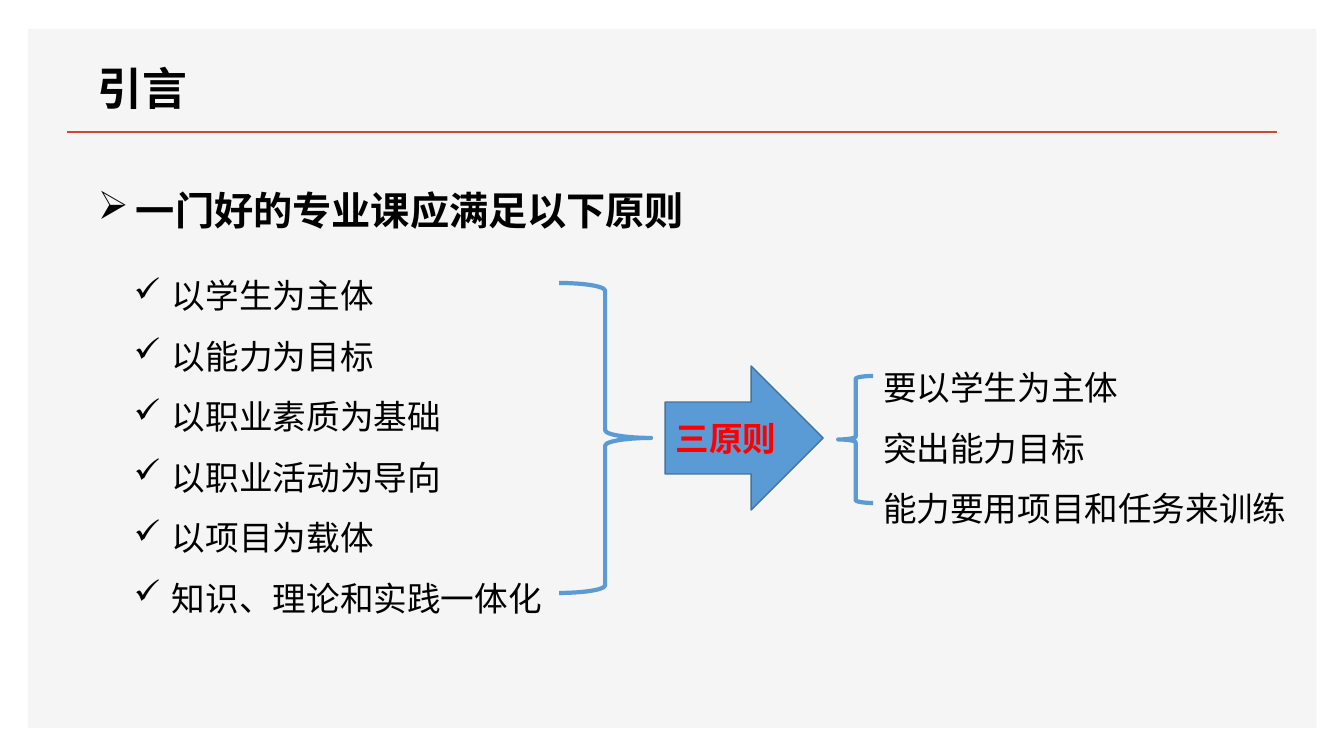
from lxml import etree
from pptx import Presentation
from pptx.dml.color import RGBColor
from pptx.enum.shapes import MSO_CONNECTOR, MSO_SHAPE
from pptx.enum.text import MSO_ANCHOR, MSO_AUTO_SIZE, PP_ALIGN
from pptx.oxml.ns import qn
from pptx.util import Inches, Pt

RECTANGLE = MSO_SHAPE.RECTANGLE
LEFT_BRACE, RIGHT_BRACE = MSO_SHAPE.LEFT_BRACE, MSO_SHAPE.RIGHT_BRACE
RIGHT_ARROW = MSO_SHAPE.RIGHT_ARROW
STRAIGHT = MSO_CONNECTOR.STRAIGHT
MIDDLE, CENTER = MSO_ANCHOR.MIDDLE, PP_ALIGN.CENTER
FIT_SHAPE = MSO_AUTO_SIZE.SHAPE_TO_FIT_TEXT

FONT = "Lato"
COLORS = {
    "panel": "F5F5F5",
    "rule": "D24726",
    "blue": "5B9BD5",
    "blue edge": "43739E",
    "text": "000000",
    "accent": "FF0000",
}

# Text boxes: box in px, lines, format
TEXTS = [
    ((88, 56, 111, 65), ["引言"], {"size": 32, "bold": True}),
    ((88, 158, 613, 73), ["一门好的专业课应满足以下原则"],
     {"size": 28, "bold": True, "spacing": 1.5, "bullet": "➢"}),
    ((124, 250, 463, 377),
     ["以学生为主体", "以能力为目标", "以职业素质为基础",
      "以职业活动为导向", "以项目为载体", "知识、理论和实践一体化"],
     {"size": 24, "spacing": 1.5, "bullet": "✓", "wrap": True}),
    ((873, 342, 427, 194),
     ["要以学生为主体", "突出能力目标", "能力要用项目和任务来训练"],
     {"size": 24, "spacing": 1.5}),
]
ARROW_LABEL = "三原则"

# Shapes: preset, box in px, fill, line colour, line width in points
PANEL = (RECTANGLE, (28, 29, 1288, 699), "panel", None, 0)
PRINCIPLES_BRACE = (RIGHT_BRACE, (559, 283, 92, 310), None, "blue", 3)
ARROW = (RIGHT_ARROW, (665, 366, 158, 144), "blue", "blue edge", 1)
SUMMARY_BRACE = (LEFT_BRACE, (838, 376, 35, 127), None, "blue", 3)
TITLE_RULE = (67, 132, 1277, 132)
BULLET_INDENT = 38


def px(value):
    return round(value * 914400 / 100.8)


def color(name):
    return RGBColor.from_string(COLORS[name])


def add_shape(slide, preset, box, fill, line, width):
    shape = slide.shapes.add_shape(preset, *map(px, box))
    shape.shadow.inherit = False
    if fill:
        shape.fill.solid()
        shape.fill.fore_color.rgb = color(fill)
    else:
        shape.fill.background()
    if line:
        shape.line.color.rgb = color(line)
        shape.line.width = Pt(width)
    else:
        shape.line.fill.background()
    return shape


def add_rule(slide, ends):
    rule = slide.shapes.add_connector(STRAIGHT, *map(px, ends))
    rule.line.color.rgb = color("rule")
    rule.line.width = Pt(2)
    etree.SubElement(rule._element.spPr, qn("a:effectLst"))


def write_run(paragraph, text, size, bold=False, text_color="text"):
    run = paragraph.add_run()
    run.text = text
    run.font.color.rgb = color(text_color)
    for name, value in {"name": FONT, "size": Pt(size), "bold": bold}.items():
        setattr(run.font, name, value)
    east_asian = etree.SubElement(run._r.get_or_add_rPr(), qn("a:ea"))
    east_asian.set("typeface", FONT)


def add_bullet(paragraph, character):
    properties = paragraph._p.get_or_add_pPr()
    properties.set("marL", str(px(BULLET_INDENT)))
    properties.set("indent", str(-px(BULLET_INDENT)))
    etree.SubElement(properties, qn("a:buChar")).set("char", character)


def add_text(slide, box, lines, style):
    frame = slide.shapes.add_textbox(*map(px, box)).text_frame
    frame.word_wrap = style.get("wrap", False)
    frame.auto_size = FIT_SHAPE
    for index, line in enumerate(lines):
        paragraph = frame.add_paragraph() if index else frame.paragraphs[0]
        paragraph.line_spacing = style.get("spacing")
        if "bullet" in style:
            add_bullet(paragraph, style["bullet"])
        write_run(paragraph, line, style["size"], style.get("bold", False))


def main():
    presentation = Presentation()
    presentation.slide_width = Inches(13.33)
    presentation.slide_height = Inches(7.5)
    slide = presentation.slides.add_slide(presentation.slide_layouts[6])

    add_shape(slide, *PANEL)
    add_rule(slide, TITLE_RULE)
    for box, lines, style in TEXTS:
        add_text(slide, box, lines, style)

    add_shape(slide, *PRINCIPLES_BRACE)
    arrow = add_shape(slide, *ARROW)
    arrow.text_frame.vertical_anchor = MIDDLE
    label = arrow.text_frame.paragraphs[0]
    label.alignment = CENTER
    write_run(label, ARROW_LABEL, 24, True, "accent")
    add_shape(slide, *SUMMARY_BRACE)

    presentation.save("out.pptx")


if __name__ == "__main__":
    main()
